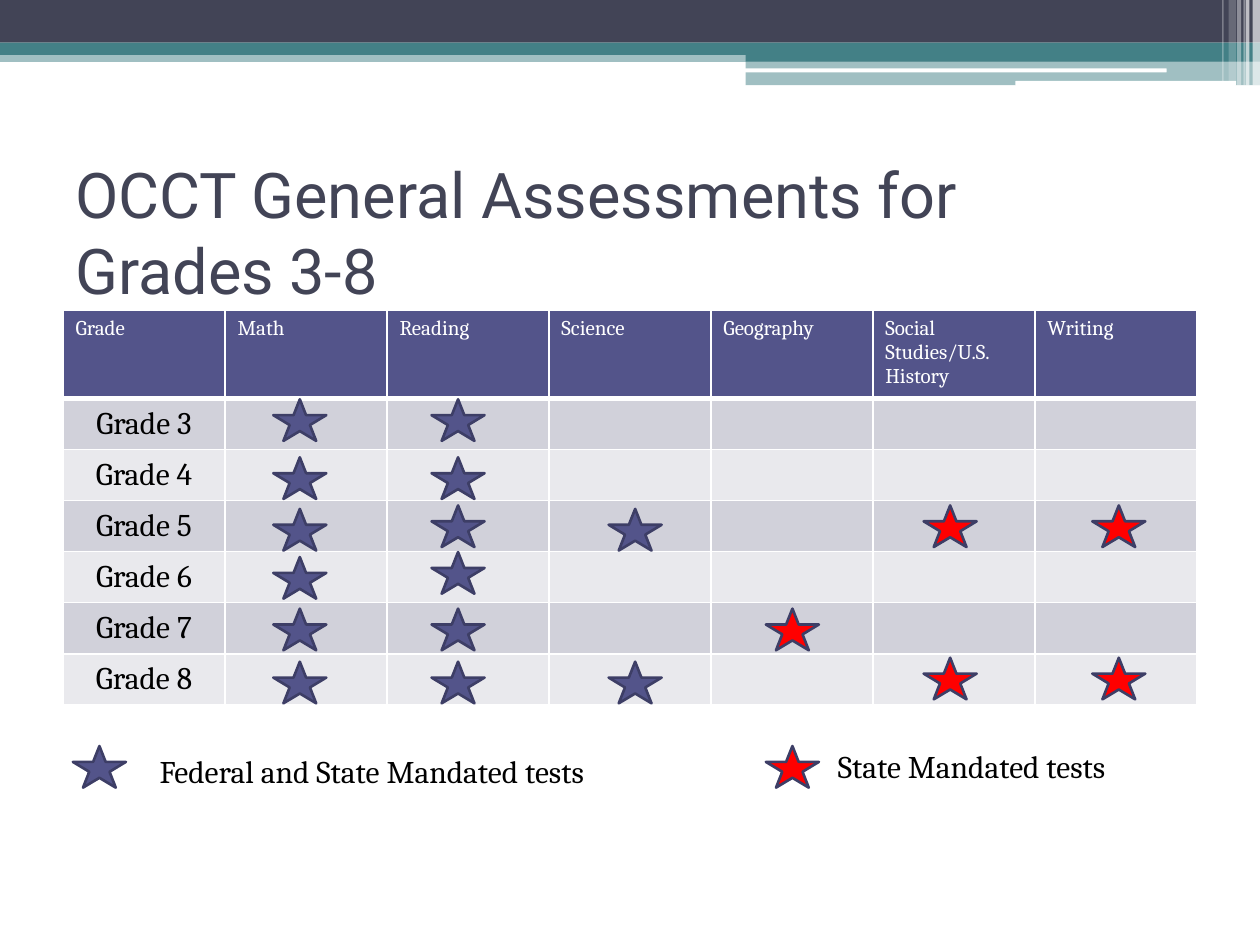
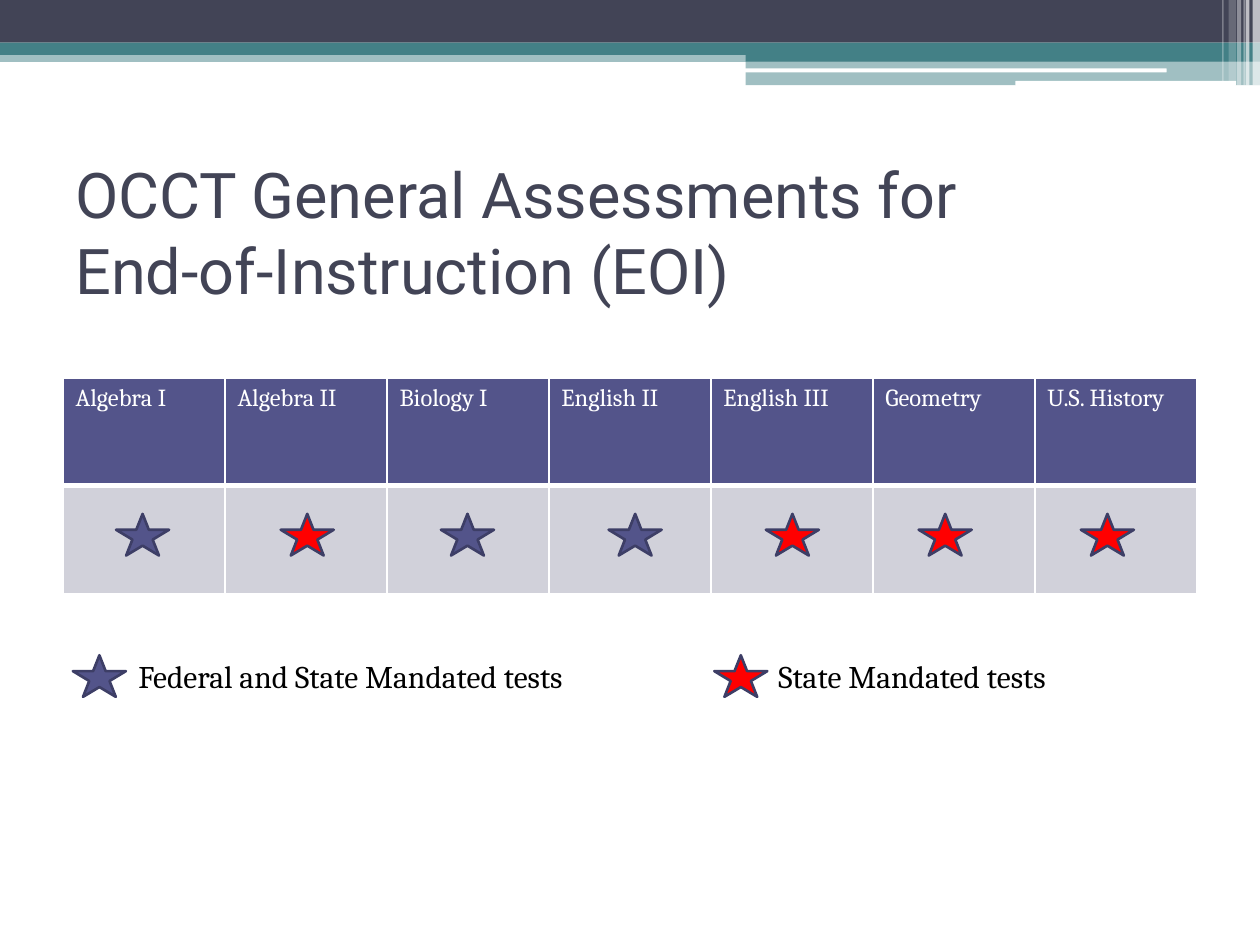
from dataclasses import dataclass
from typing import Any, NamedTuple, Sequence

from lxml.etree import SubElement
from pptx import Presentation
from pptx.dml.color import RGBColor
from pptx.enum.shapes import MSO_SHAPE as Shape
from pptx.enum.text import MSO_ANCHOR as Anchor, PP_ALIGN as Align
from pptx.oxml.ns import qn
from pptx.util import Cm, Pt


@dataclass(frozen=True)
class Theme:
    slate: str = "424456"
    teal: str = "438086"
    white: str = "FFFFFF"
    black: str = "000000"
    indigo: str = "53548A"
    outline: str = "3D3E66"
    red: str = "FF0000"
    stripes: tuple[str, str] = ("D1D1DA", "E9E9ED")
    title_font: str = "Roboto"
    body_font: str = "Cambria"
    title_size: int = 36
    body_size: int = 18
    header_size: int = 12
    wide_header_size: int = 14


THEME = Theme()
FEDERAL, STATE = THEME.indigo, THEME.red


class Box(NamedTuple):
    """Left, top, width and height in centimetres."""
    left: float
    top: float
    width: float
    height: float

    def lengths(self) -> list[Cm]:
        return [Cm(value) for value in self]


class Band(NamedTuple):
    box: Box
    color: str
    opacity: int = 100
    kind: Shape = Shape.RECTANGLE


class StarColumn(NamedTuple):
    left: float
    tops: Sequence[float]
    color: str = FEDERAL


class LegendItem(NamedTuple):
    label: str
    color: str
    star: tuple[float, float]
    text: Box


@dataclass(frozen=True)
class Grid:
    top: float
    headers: Sequence[str]
    row_names: Sequence[str]
    header_size: int
    header_height: float
    row_height: float


@dataclass(frozen=True)
class AssessmentSlide:
    title: tuple[str, str]
    grid: Grid
    stars: Sequence[StarColumn]
    legend: Sequence[LegendItem]


SLIDE_W, SLIDE_H = 25.4, 19.05
MARGIN = 1.27
GRID_W = SLIDE_W - 2 * MARGIN
STAR_W, STAR_H = 1.07, 0.84
TITLE_BOX = Box(MARGIN, 3.18, GRID_W, 2.97)
BLOCK_LEFT, BLOCK_W = 15.03, 10.37

BANDS = [
    Band(Box(0, 1.02, SLIDE_W, 0.23), THEME.teal, 50),
    Band(Box(0, 0, SLIDE_W, 0.86), THEME.slate),
    Band(Box(0, 0.86, SLIDE_W, 0.25), THEME.teal),
    Band(Box(BLOCK_LEFT, 0.99, BLOCK_W, 0.25), THEME.teal),
    Band(Box(BLOCK_LEFT, 1.23, BLOCK_W, 0.49), THEME.teal, 50),
    Band(Box(15.01, 1.38, 8.51, 0.08), THEME.white, kind=Shape.ROUNDED_RECTANGLE),
    Band(Box(20.47, 1.63, 4.45, 0.1), THEME.white, kind=Shape.ROUNDED_RECTANGLE),
    *(Band(Box(left, 0, width, height), THEME.white, opacity)
      for left, width, height, opacity in [
          (25.25, 0.15, 1.73, 65), (25.11, 0.08, 1.73, 65), (25.07, 0.02, 1.73, 60),
          (24.94, 0.08, 1.73, 40), (24.77, 0.15, 1.63, 20), (24.64, 0.03, 1.63, 30)]),
]

FEDERAL_LABEL, STATE_LABEL = "Federal and State Mandated tests", "State Mandated tests"

SLIDES = [
    AssessmentSlide(
        title=("OCCT General Assessments for ", "Grades 3-8"),
        grid=Grid(6.25,
                  ["Grade", "Math", "Reading", "Science", "Geography",
                   "Social Studies/U.S. History", "Writing"],
                  [f"Grade {n}" for n in range(3, 9)],
                  THEME.header_size, 1.7, 1.03),
        stars=[
            StarColumn(5.51, [8.05, 9.22, 10.26, 11.23, 12.27, 13.34]),
            StarColumn(8.7, [8.05, 9.22, 10.19, 11.13, 12.27, 13.34]),
            StarColumn(12.27, [10.26, 13.34]),
            StarColumn(15.44, [12.27], STATE),
            StarColumn(18.62, [10.19, 13.26], STATE),
            StarColumn(22.02, [10.19, 13.26], STATE),
        ],
        legend=[
            LegendItem(FEDERAL_LABEL, FEDERAL, (1.47, 15.04), Box(2.97, 15.04, 11.23, 1.02)),
            LegendItem(STATE_LABEL, STATE, (15.44, 15.04), Box(16.64, 14.94, 8.26, 1.02)),
        ]),
    AssessmentSlide(
        title=("OCCT General Assessments for ", "End-of-Instruction (EOI)"),
        grid=Grid(7.62,
                  ["Algebra I", "Algebra II", "Biology I", "English II", "English III",
                   "Geometry", "U.S. History"],
                  [""], THEME.wide_header_size, 2.17, 2.17),
        stars=[
            StarColumn(left, [10.36], color) for left, color in [
                (2.34, FEDERAL), (5.66, STATE), (8.89, FEDERAL), (12.27, FEDERAL),
                (15.44, STATE), (18.52, STATE), (21.79, STATE)]
        ],
        legend=[
            LegendItem(FEDERAL_LABEL, FEDERAL, (1.47, 13.21), Box(2.54, 13.13, 11.23, 1.02)),
            LegendItem(STATE_LABEL, STATE, (14.4, 13.21), Box(15.44, 13.13, 8.26, 1.02)),
        ]),
]


def rgb(color: str) -> RGBColor:
    return RGBColor.from_string(color)


def apply(target: Any, values: dict[str, Any]) -> None:
    for name, value in values.items():
        setattr(target, name, value)


def write(p: Any, lines: Sequence[str], size: int, color: str,
          font: str = THEME.body_font) -> None:
    """Put lines in one paragraph, with a line break between them."""
    for i, line in enumerate(lines):
        if i:
            p.add_line_break()
        r = p.add_run()
        r.text = line
        apply(r.font, {"name": font, "size": Pt(size), "bold": False})
        r.font.color.rgb = rgb(color)


def add_filled(s: Any, kind: Shape, box: Box, color: str, opacity: int = 100) -> Any:
    sp = s.shapes.add_shape(kind, *box.lengths())
    sp.shadow.inherit = False
    sp.fill.solid()
    sp.fill.fore_color.rgb = rgb(color)
    sp.line.fill.background()
    if opacity < 100:
        clr = sp.fill._xPr.find(f"{qn('a:solidFill')}/{qn('a:srgbClr')}")
        SubElement(clr, qn("a:alpha"), val=str(opacity * 1000))
    return sp


def add_star(s: Any, left: float, top: float, color: str) -> None:
    sp = add_filled(s, Shape.STAR_5_POINT, Box(left, top, STAR_W, STAR_H), color)
    sp.line.color.rgb = rgb(THEME.outline)
    sp.line.width = Pt(1.5)


def add_text(s: Any, box: Box, lines: Sequence[str], size: int, color: str,
             font: str = THEME.body_font, anchor: Anchor = Anchor.TOP) -> None:
    tf = s.shapes.add_textbox(*box.lengths()).text_frame
    apply(tf, {"word_wrap": True, "vertical_anchor": anchor})
    write(tf.paragraphs[0], lines, size, color, font)


def style_cell(cell: Any, fill: str, bottom: int = 1) -> None:
    """Give a cell white borders and a solid fill."""
    tc_pr = cell._tc.get_or_add_tcPr()
    for side, width in {"L": 1, "R": 1, "T": 1, "B": bottom}.items():
        ln = SubElement(tc_pr, qn(f"a:ln{side}"), w=str(Pt(width)))
        SubElement(SubElement(ln, qn("a:solidFill")), qn("a:srgbClr"), val=THEME.white)
    cell.fill.solid()
    cell.fill.fore_color.rgb = rgb(fill)


def add_grid(s: Any, grid: Grid) -> None:
    heights = [grid.header_height] + [grid.row_height] * len(grid.row_names)
    columns = len(grid.headers)
    box = Box(MARGIN, grid.top, GRID_W, sum(heights))
    table = s.shapes.add_table(len(heights), columns, *box.lengths()).table
    for column in table.columns:
        column.width = Cm(GRID_W / columns)
    for row, height in zip(table.rows, heights):
        row.height = Cm(height)
    for c, header in enumerate(grid.headers):
        cell = table.cell(0, c)
        style_cell(cell, THEME.indigo, bottom=3)
        write(cell.text_frame.paragraphs[0], [header], grid.header_size, THEME.white)
    for i, name in enumerate(grid.row_names):
        for c in range(columns):
            style_cell(table.cell(i + 1, c), THEME.stripes[i % 2])
        if name:
            cell = table.cell(i + 1, 0)
            cell.vertical_anchor = Anchor.MIDDLE
            p = cell.text_frame.paragraphs[0]
            p.alignment = Align.CENTER
            write(p, [name], THEME.body_size, THEME.black)


def build_slide(prs: Any, content: AssessmentSlide) -> None:
    s = prs.slides.add_slide(prs.slide_layouts[6])
    for band in BANDS:
        add_filled(s, band.kind, band.box, band.color, band.opacity)
    add_text(s, TITLE_BOX, content.title, THEME.title_size, THEME.slate,
             THEME.title_font, Anchor.MIDDLE)
    add_grid(s, content.grid)
    for column in content.stars:
        for top in column.tops:
            add_star(s, column.left, top, column.color)
    for item in content.legend:
        add_star(s, *item.star, item.color)
        add_text(s, item.text, [item.label], THEME.body_size, THEME.black)


def main() -> None:
    prs = Presentation()
    apply(prs, {"slide_width": Cm(SLIDE_W), "slide_height": Cm(SLIDE_H)})
    for content in SLIDES:
        build_slide(prs, content)
    prs.save("out.pptx")


if __name__ == "__main__":
    main()
